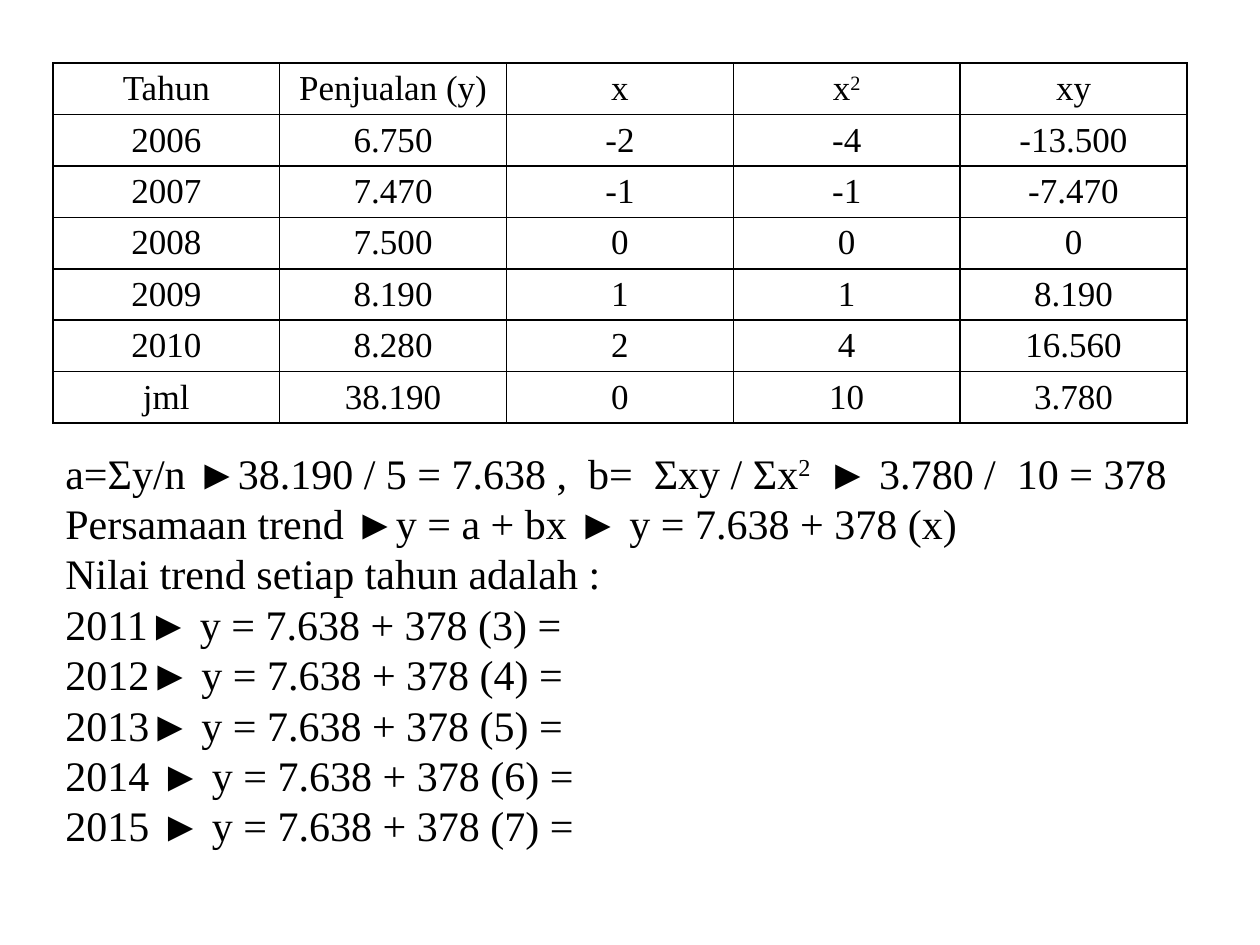
from lxml.etree import SubElement
from pptx import Presentation
from pptx.dml.color import RGBColor
from pptx.enum.text import MSO_ANCHOR, PP_ALIGN
from pptx.oxml.ns import qn
from pptx.util import Inches, Pt

FONT = "Times New Roman"
BLACK = "000000"
SALES = [
    ["Tahun", "Penjualan (y)", "x", "x^2", "xy"],
    ["2006", "6.750", "-2", "-4", "-13.500"],
    ["2007", "7.470", "-1", "-1", "-7.470"],
    ["2008", "7.500", "0", "0", "0"],
    ["2009", "8.190", "1", "1", "8.190"],
    ["2010", "8.280", "2", "4", "16.560"],
    ["jml", "38.190", "0", "10", "3.780"],
]
FORECASTS = [("2011", 3), ("2012", 4), ("2013", 5), ("2014 ", 6), ("2015 ", 7)]
TREND_LINES = [
    "a=Σy/n ►38.190 / 5 = 7.638 ,  b=  Σxy / Σx^2 ^ ► 3.780 /  10 = 378",
    "Persamaan trend ►y = a + bx ► y = 7.638 + 378 (x)",
    "Nilai trend setiap tahun adalah :",
] + [f"{year}► y = 7.638 + 378 ({x}) =" for year, x in FORECASTS]


def color(hex_string):
    return RGBColor.from_string(hex_string)


def write(para, text, size):
    para.font.name = FONT
    para.font.size = Pt(size)
    para.font.color.rgb = color(BLACK)
    for index, part in enumerate(text.split("^")):
        span = para.add_run()
        span.text = part
        if index % 2:
            span.font._element.set("baseline", "30000")


def add_borders(cell):
    properties = cell._tc.get_or_add_tcPr()
    for position, side in enumerate(("lnL", "lnR", "lnT", "lnB")):
        line = properties.makeelement(qn(f"a:{side}"), {"w": str(Pt(1))})
        fill = SubElement(line, qn("a:solidFill"))
        SubElement(fill, qn("a:srgbClr"), val=BLACK)
        properties.insert(position, line)


def add_sales_table(page, left, top, width, height):
    frame = page.shapes.add_table(len(SALES), len(SALES[0]), left, top, width, height)
    table = frame.table
    table.first_row = False
    table.horz_banding = False
    for row, values in enumerate(SALES):
        for column, value in enumerate(values):
            cell = table.cell(row, column)
            cell.fill.background()
            cell.vertical_anchor = MSO_ANCHOR.MIDDLE
            cell.margin_top = cell.margin_bottom = Inches(0.04)
            add_borders(cell)
            para = cell.text_frame.paragraphs[0]
            para.alignment = PP_ALIGN.CENTER
            write(para, value, 20)


def add_trend_text(page, left, top, width, height):
    box = page.shapes.add_textbox(left, top, width, height)
    frame = box.text_frame
    frame.word_wrap = True
    for index, text in enumerate(TREND_LINES):
        para = frame.add_paragraph() if index else frame.paragraphs[0]
        para.line_spacing = Pt(28.8)
        write(para, text, 24)


def main():
    deck = Presentation()
    deck.slide_width, deck.slide_height = Inches(10), Inches(7.5)
    page = deck.slides.add_slide(deck.slide_layouts[6])
    add_sales_table(page, Inches(0.42), Inches(0.5), Inches(9), Inches(2.86))
    add_trend_text(page, Inches(0.42), Inches(3.5), Inches(9.08), Inches(3.73))
    deck.save("out.pptx")


if __name__ == "__main__":
    main()
